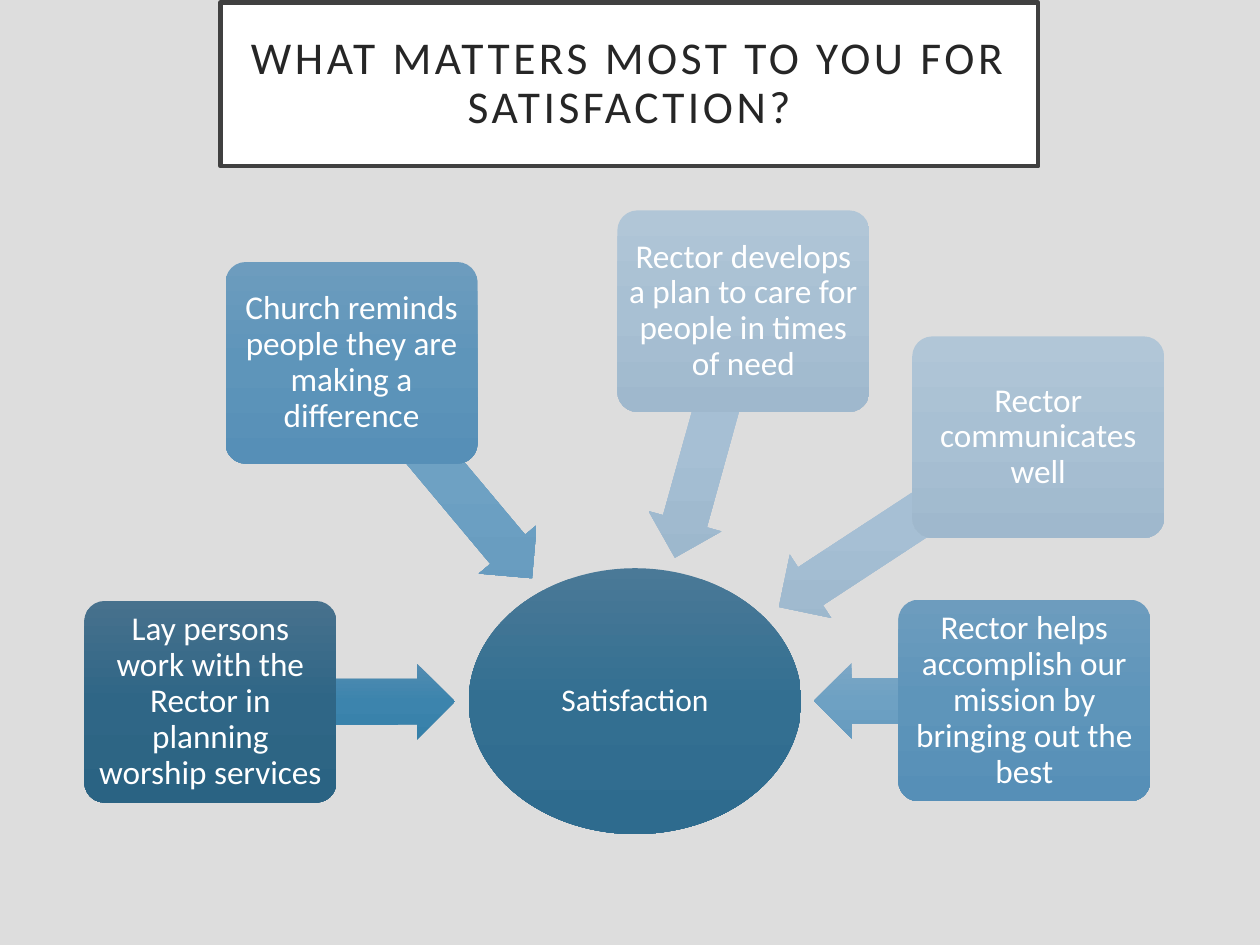
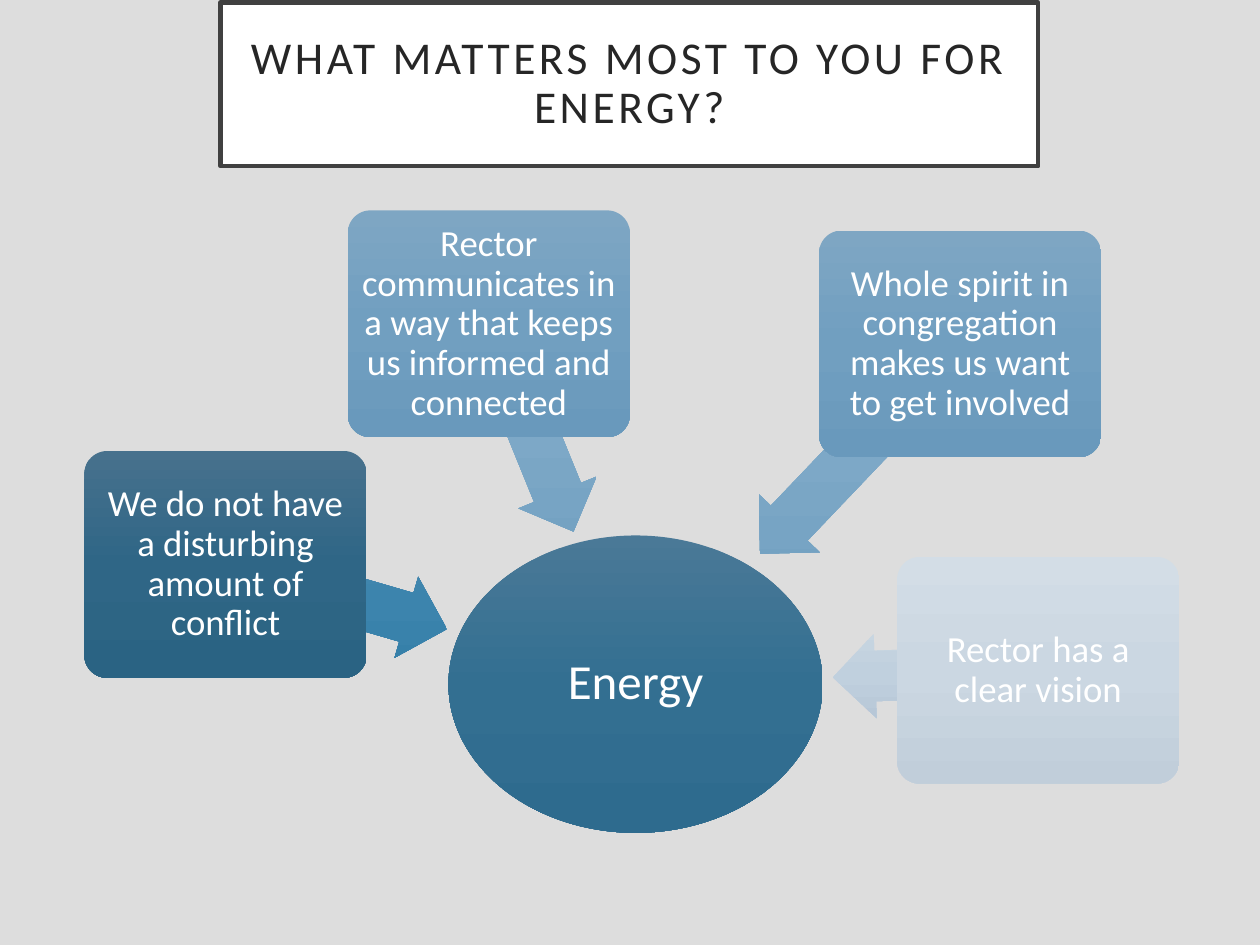
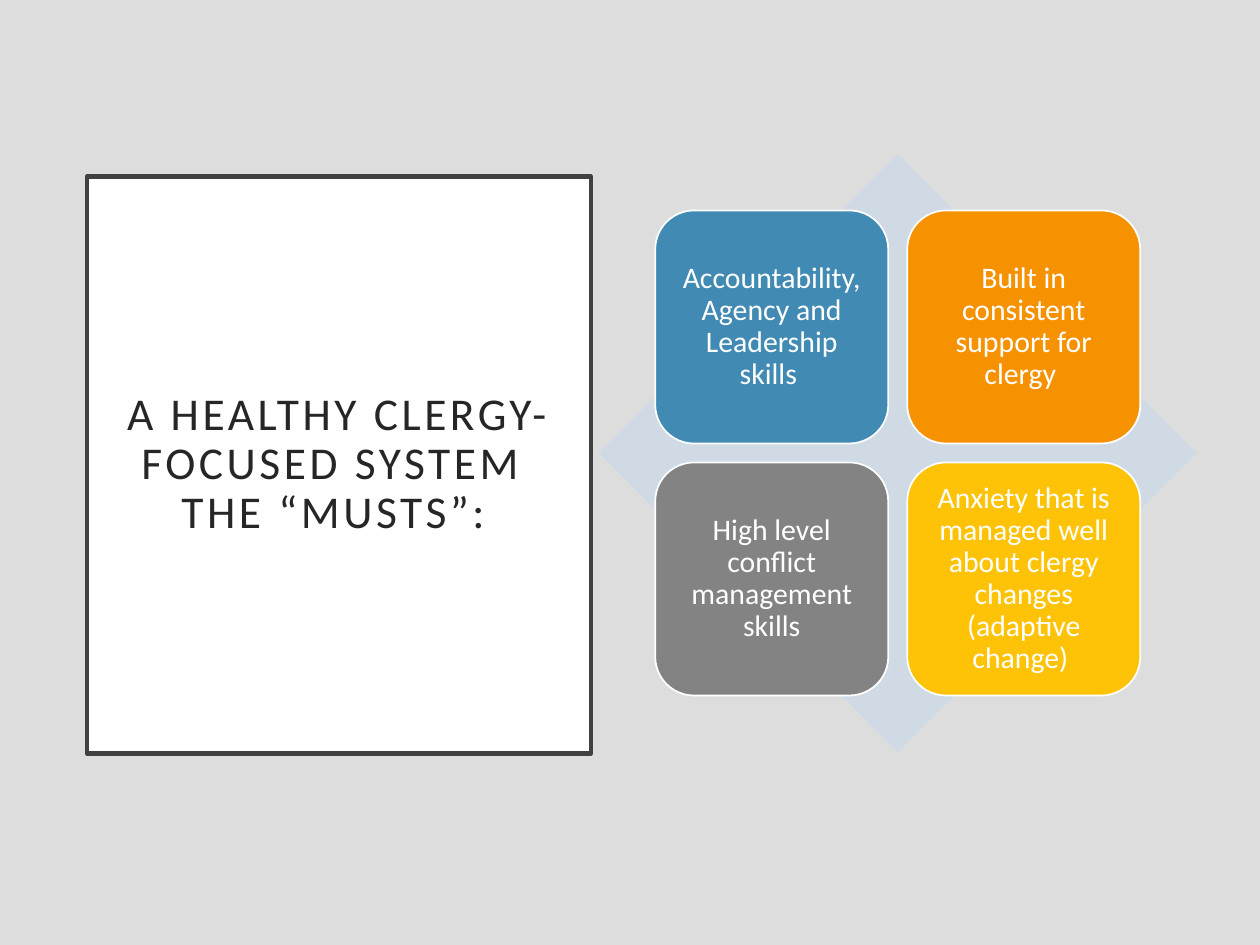
import copy
import dataclasses
import math

import pptx
import pptx.dml.color
import pptx.enum.shapes
import pptx.enum.text
import pptx.util

Inches = pptx.util.Inches
Kind = pptx.enum.shapes.MSO_SHAPE


@dataclasses.dataclass(frozen=True)
class Theme:
    font: str = "Calibri"
    background: str = "DDDDDD"
    title_fill: str = "FFFFFF"
    title_line: str = "404040"
    title_text: str = "262626"
    title_size: int = 26
    title_line_width: float = 2.5
    white: str = "FFFFFF"
    hub: tuple = ("4A7997", "336F91", "2E6B8E")
    diamond: str = "CFDAE5"
    blue: str = "418AB3"
    orange: str = "F69200"
    grey: str = "838383"
    yellow: str = "FEC306"
    must_size: int = 17


theme = Theme()

# Each shade holds the gradient of a box and that of its arrow.
DARK = (("47718D", "2F6686", "2A6383"), ("528CB1", "3C84AD", "3680A9"))
MEDIUM = (("6D9CBE", "5E95BA", "568FB7"), ("7CA7C6", "6EA1C3", "669BBF"))
SOFT = (("7EA6C3", "719FC0", "6999BC"), ("89AECA", "7DA8C7", "74A2C2"))
LIGHT = (("B1C6D7", "A8C0D3", "9FB8CD"), ("AFC5D7", "A6BFD4", "9DB8CD"))
PALE = (("D3DDE6", "CBD7E2", "C1CEDA"), ("C8D6E1", "C0D0DE", "B7C7D7"))


def add_figure(slide, kind, left, top, width, height, fill, line=None, line_width=1):
    """Add a preset shape; a tuple as fill means a gradient from top to bottom."""
    figure = slide.shapes.add_shape(
        kind, Inches(left), Inches(top), Inches(width), Inches(height))
    figure.shadow.inherit = False
    if isinstance(fill, tuple):
        figure.fill.gradient()
        figure.fill.gradient_angle = 270
        gradient = figure._element.spPr.gradFill
        gradient.set("rotWithShape", "0")
        stop_list = gradient.gsLst
        stop_list.append(copy.deepcopy(stop_list[0]))
        for stop, position, colour in zip(figure.fill.gradient_stops, (0, 0.5, 1), fill):
            stop.position = position
            stop.color.rgb = pptx.dml.color.RGBColor.from_string(colour)
    else:
        figure.fill.solid()
        figure.fill.fore_color.rgb = pptx.dml.color.RGBColor.from_string(fill)
    if line:
        figure.line.color.rgb = pptx.dml.color.RGBColor.from_string(line)
        figure.line.width = pptx.util.Pt(line_width)
    else:
        figure.line.fill.background()
    return figure


def write(figure, text, *, size, colour=theme.white, inset=0.04, tracking=0):
    """Write centred text; tracking is the letter spacing in points."""
    frame = figure.text_frame
    frame.word_wrap = True
    frame.vertical_anchor = pptx.enum.text.MSO_ANCHOR.MIDDLE
    frame.margin_left = frame.margin_right = Inches(inset)
    frame.margin_top = frame.margin_bottom = Inches(inset)
    para = frame.paragraphs[0]
    para.text = text
    para.alignment = pptx.enum.text.PP_ALIGN.CENTER
    para.line_spacing = 0.9
    for span in para.runs:
        span.font.name = theme.font
        span.font.size = pptx.util.Pt(size)
        span.font.color.rgb = pptx.dml.color.RGBColor.from_string(colour)
        if tracking:
            span.font._element.set("spc", str(tracking * 100))


deck = pptx.Presentation()
deck.slide_width, deck.slide_height = Inches(10), Inches(7.5)
master_fill = deck.slide_master.background.fill
master_fill.solid()
master_fill.fore_color.rgb = pptx.dml.color.RGBColor.from_string(theme.background)

# One page each, with its title
wide_title = (1.75, 0.02, 6.49, 1.3)
titles = [
    ("WHAT MATTERS MOST TO YOU FOR SATISFACTION?", wide_title),
    ("WHAT MATTERS MOST TO YOU FOR ENERGY?", wide_title),
    ("A HEALTHY CLERGY-FOCUSED SYSTEM \vTHE “MUSTS”:\t", (0.69, 1.4, 4, 4.58)),
]
pages = []
for title, place in titles:
    page = deck.slides.add_slide(deck.slide_layouts[6])
    title_box = add_figure(page, Kind.RECTANGLE, *place, theme.title_fill,
                           theme.title_line, theme.title_line_width)
    write(title_box, title, size=theme.title_size, colour=theme.title_text,
          inset=0.2, tracking=2)
    pages.append(page)

# Slides 1 and 2: boxes whose arrows point at the middle of a hub
# Each factor: text, left, top, arrow length, shade
diagrams = [
    dict(hub="Satisfaction", hub_place=(3.72, 4.51, 2.64, 2.11), hub_size=18, hub_inset=0.01,
         box_width=2, box_height=1.6, arrow_height=0.6, text_size=19, factors=[
             ("Lay persons work with the Rector in planning worship services",
              0.67, 4.77, 1.94, DARK),
             ("Church reminds people they are making a difference", 1.79, 2.08, 2.23, MEDIUM),
             ("Rector communicates well", 7.24, 2.67, 2.46, LIGHT),
             ("Rector develops a plan to care for people in times of need",
              4.9, 1.67, 2.03, LIGHT),
             ("Rector helps accomplish our mission by bringing out the best",
              7.13, 4.76, 1.67, MEDIUM),
         ]),
    dict(hub="Energy", hub_place=(3.56, 4.25, 2.97, 2.36), hub_size=28, hub_inset=0.02,
         box_width=2.24, box_height=1.8, arrow_height=0.67, text_size=21, factors=[
             ("We do not have a disturbing amount of conflict", 0.67, 3.58, 1.83, DARK),
             ("Rector communicates in a way that keeps us informed and connected",
              2.76, 1.67, 1.78, SOFT),
             ("Rector has a clear vision", 7.12, 4.42, 1.63, PALE),
             ("Whole spirit in congregation makes us want to get involved",
              6.5, 1.83, 2.3, SOFT),
         ]),
]
for page, diagram in zip(pages, diagrams):
    hub_left, hub_top, hub_width, hub_height = diagram["hub_place"]
    hub = add_figure(page, Kind.OVAL, *diagram["hub_place"], theme.hub)
    write(hub, diagram["hub"], size=diagram["hub_size"], inset=diagram["hub_inset"])
    box_width, box_height = diagram["box_width"], diagram["box_height"]
    arrow_height = diagram["arrow_height"]
    for text, left, top, length, (box_fill, arrow_fill) in diagram["factors"]:
        # The arrow starts at the middle of its box
        start_x, start_y = left + box_width / 2, top + box_height / 2
        angle = math.atan2(hub_top + hub_height / 2 - start_y,
                           hub_left + hub_width / 2 - start_x)
        middle_x = start_x + length / 2 * math.cos(angle)
        middle_y = start_y + length / 2 * math.sin(angle)
        arrow = add_figure(page, Kind.LEFT_ARROW, middle_x - length / 2,
                           middle_y - arrow_height / 2, length, arrow_height, arrow_fill)
        arrow.adjustments[0], arrow.adjustments[1] = 0.6, 0.5
        arrow.rotation = (math.degrees(angle) + 180) % 360
        box = add_figure(page, Kind.ROUNDED_RECTANGLE, left, top, box_width, box_height, box_fill)
        box.adjustments[0] = 0.1
        write(box, text, size=diagram["text_size"])

# Slide 3: four musts in a grid on a diamond
musts = [
    ("Accountability, Agency and Leadership skills ", theme.blue),
    ("Built in consistent support for clergy ", theme.orange),
    ("High level conflict management skills", theme.grey),
    ("Anxiety that is managed well about clergy changes (adaptive change) ", theme.yellow),
]
must_side, must_step = 1.85, 2
add_figure(pages[2], Kind.DIAMOND, 4.75, 1.22, 4.75, 4.75, theme.diamond)
for index, (text, fill) in enumerate(musts):
    row, column = divmod(index, 2)
    must = add_figure(pages[2], Kind.ROUNDED_RECTANGLE, 5.2 + column * must_step,
                      1.67 + row * must_step, must_side, must_side, fill, theme.white)
    write(must, text, size=theme.must_size, inset=0.07)

deck.save("out.pptx")
